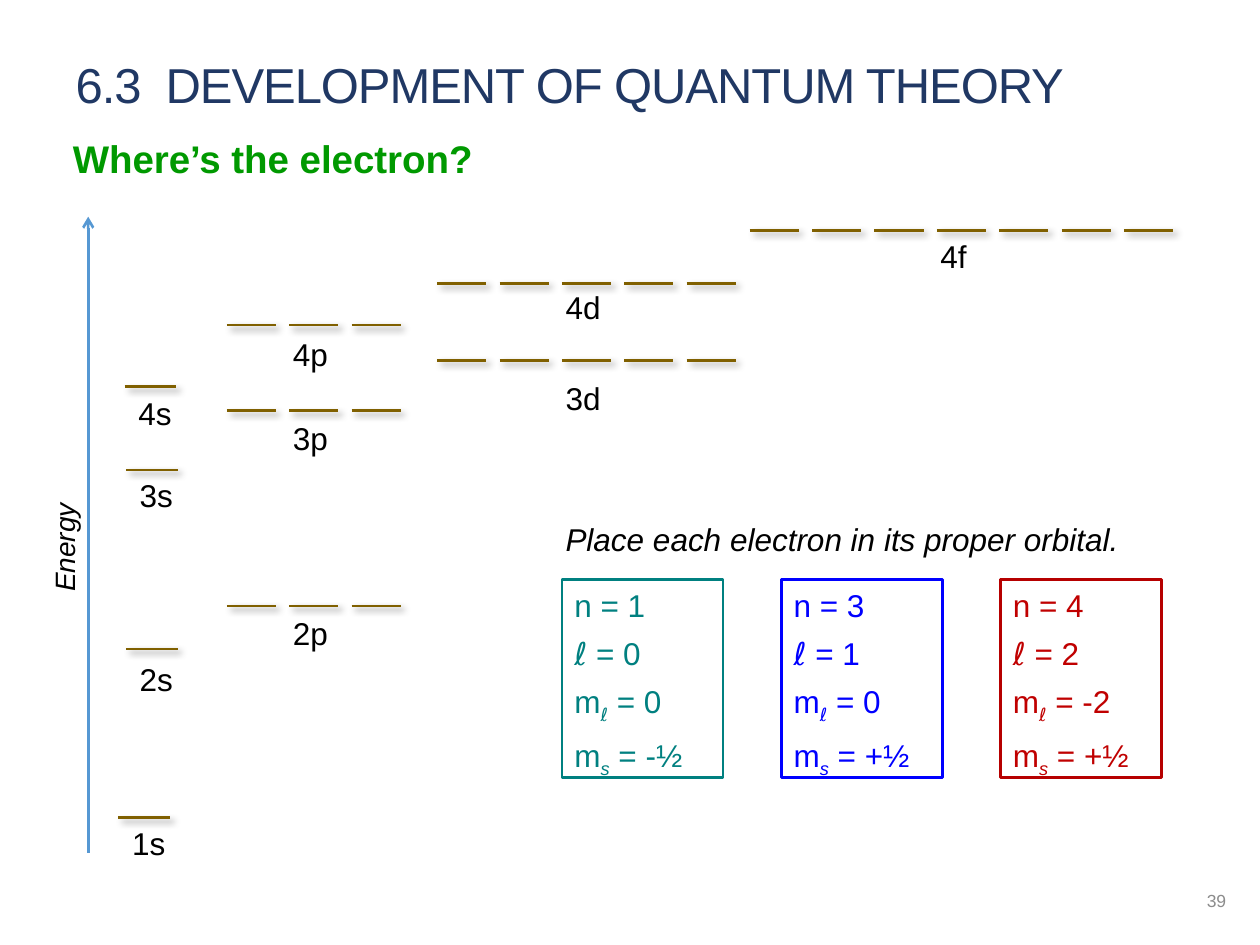
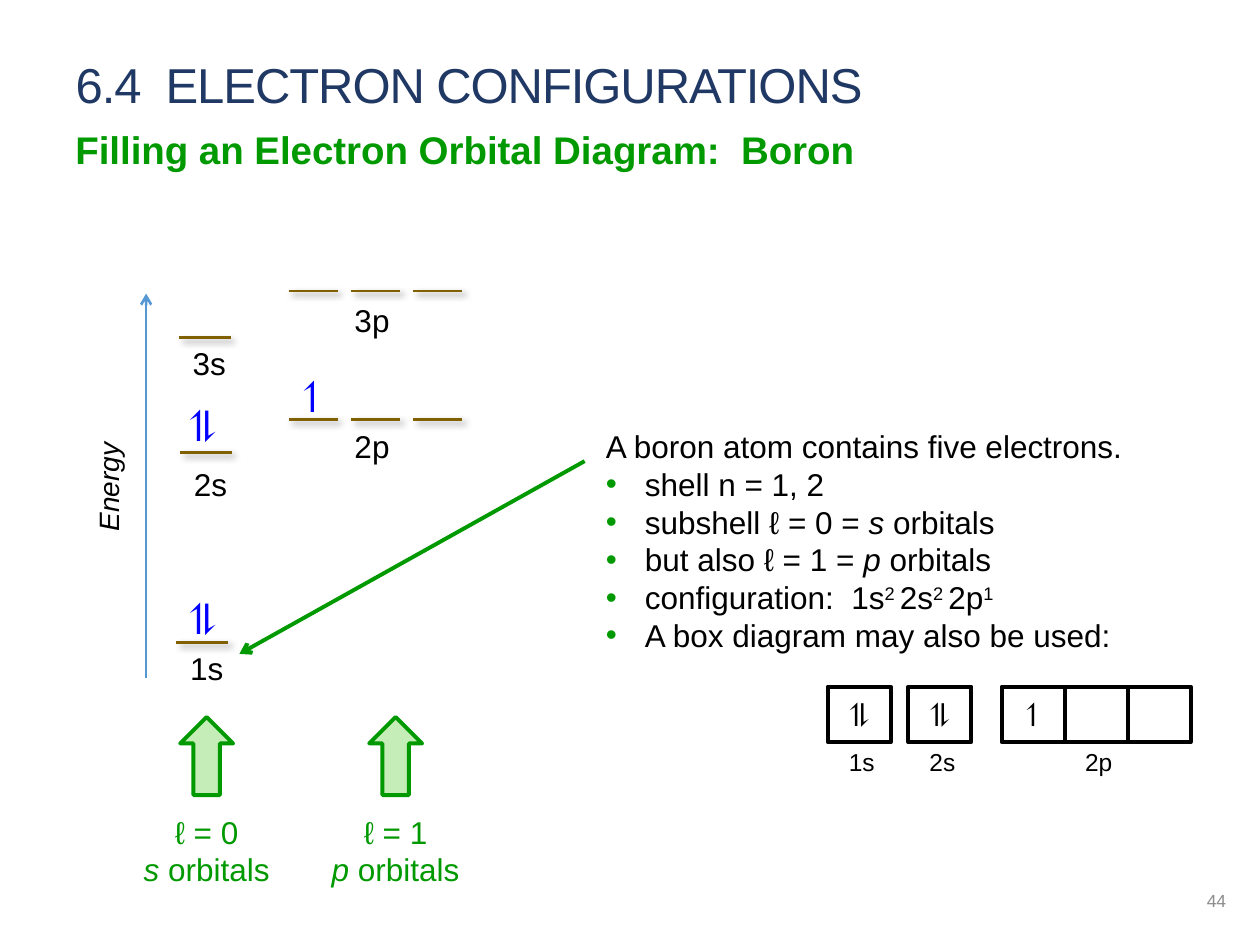
from dataclasses import dataclass

from lxml.etree import SubElement
from pptx import Presentation
from pptx.dml.color import RGBColor
from pptx.enum.shapes import MSO_CONNECTOR, MSO_SHAPE
from pptx.enum.text import MSO_ANCHOR, MSO_AUTO_SIZE, PP_ALIGN
from pptx.oxml.ns import qn
from pptx.util import Inches, Pt


@dataclass(frozen=True)
class Theme:
    font: str = "Arial"
    symbol_font: str = "DejaVu Sans"
    spin_font: str = "Cambria"
    title: str = "203864"
    green: str = "009900"
    pale_green: str = "C4EDB7"
    text: str = "000000"
    number: str = "8C8C8C"
    orbital: str = "806000"
    axis: str = "5698D3"
    blue: str = "0000FF"
    teal: str = "008080"
    red: str = "C00000"
    red_line: str = "B60000"
    title_size: int = 28
    subtitle_size: int = 22
    spin_size: int = 24
    body_size: int = 18
    axis_size: int = 16
    small_size: int = 14
    number_size: int = 10


THEME = Theme()
ITALIC = {"italic": True}


def add_run(p, text, *, size=THEME.body_size, color=THEME.text, font=THEME.font,
            bold=False, italic=False, baseline=0, spacing=0):
    """Add one run; baseline is in percent and spacing in points."""
    r = p.add_run()
    r.text = text
    r.font.name, r.font.size = font, Pt(size)
    r.font.bold, r.font.italic = bold, italic
    r.font.color.rgb = RGBColor.from_string(color)
    if baseline:
        r.font._element.set("baseline", str(baseline * 1000))
    if spacing:
        r.font._element.set("spc", str(round(spacing * 100)))


def add_bullet(p):
    pPr = p._p.get_or_add_pPr()
    pPr.set("marL", str(Inches(0.31)))
    pPr.set("indent", str(-Inches(0.31)))
    SubElement(SubElement(pPr, qn("a:buClr")), qn("a:srgbClr"), val=THEME.green)
    SubElement(pPr, qn("a:buFont"), typeface=THEME.font)
    SubElement(pPr, qn("a:buChar"), char="•")


def write(tf, paragraphs, *, align=PP_ALIGN.LEFT, anchor=MSO_ANCHOR.TOP,
          after=0, bullets_from=None, **fmt):
    """Fill a frame; a paragraph is a string or a list of strings and (string, format)."""
    tf.word_wrap = True
    tf.auto_size = MSO_AUTO_SIZE.NONE
    tf.vertical_anchor = anchor
    if isinstance(paragraphs, str):
        paragraphs = [paragraphs]
    for i, runs in enumerate(paragraphs):
        p = tf.add_paragraph() if i else tf.paragraphs[0]
        p.alignment, p.space_after = align, Pt(after)
        if bullets_from is not None and i >= bullets_from:
            add_bullet(p)
        for run in [runs] if isinstance(runs, str) else runs:
            text, extra = (run, {}) if isinstance(run, str) else run
            add_run(p, text, **{**fmt, **extra})


class Deck:
    BAR_PITCH = 0.495

    def __init__(self, theme):
        self.theme = theme
        self.prs = Presentation()
        self.prs.slide_width, self.prs.slide_height = Inches(10), Inches(7.5)

    def new_slide(self, title, subtitle, subtitle_at, number):
        t = self.theme
        self.s = self.prs.slides.add_slide(self.prs.slide_layouts[5])
        sp = self.s.shapes.title
        sp.left, sp.top = Inches(0.5), Inches(0.38)
        sp.width, sp.height = Inches(9.33), Inches(0.57)
        write(sp.text_frame, title, anchor=MSO_ANCHOR.BOTTOM, size=t.title_size,
              color=t.title, spacing=-0.6)
        self.text(*subtitle_at, 9.33, 0.72, subtitle, after=6,
                  size=t.subtitle_size, color=t.green, bold=True)
        self.text(7.58, 6.95, 2.25, 0.4, str(number), align=PP_ALIGN.RIGHT,
                  anchor=MSO_ANCHOR.MIDDLE, size=t.number_size, color=t.number)

    def text(self, x, y, w, h, paragraphs, **fmt):
        sp = self.s.shapes.add_textbox(Inches(x), Inches(y), Inches(w), Inches(h))
        write(sp.text_frame, paragraphs, **fmt)
        return sp

    def centred(self, cx, y, w, h, paragraphs, **fmt):
        return self.text(cx - w / 2, y, w, h, paragraphs, align=PP_ALIGN.CENTER, **fmt)

    def shape(self, kind, x, y, w, h, line, width, fill=None, paragraphs=None, **fmt):
        sp = self.s.shapes.add_shape(kind, Inches(x), Inches(y), Inches(w), Inches(h))
        sp.shadow.inherit = False
        if fill:
            sp.fill.solid()
            sp.fill.fore_color.rgb = RGBColor.from_string(fill)
        else:
            sp.fill.background()
        sp.line.color.rgb = RGBColor.from_string(line)
        sp.line.width = Pt(width)
        if paragraphs:
            write(sp.text_frame, paragraphs, **fmt)

    def line(self, x1, y1, x2, y2, color, width=1.5, arrow=False, shadow=False):
        c = self.s.shapes.add_connector(MSO_CONNECTOR.STRAIGHT, Inches(x1), Inches(y1),
                                        Inches(x2), Inches(y2))
        c.line.color.rgb = RGBColor.from_string(color)
        c.line.width = Pt(width)
        if arrow:
            SubElement(c.line._get_or_add_ln(), qn("a:tailEnd"), type="arrow")
        effects = SubElement(c._element.spPr, qn("a:effectLst"))
        if shadow:
            outer = SubElement(effects, qn("a:outerShdw"), blurRad=str(Pt(4)),
                               dist=str(Pt(3)), dir="2700000", rotWithShape="0")
            black = SubElement(outer, qn("a:srgbClr"), val="000000")
            SubElement(black, qn("a:alpha"), val="40000")

    def subshell(self, name, x, y, label_y):
        """Draw one bar per orbital, with the name of the subshell under the middle."""
        count = {"s": 1, "p": 3, "d": 5, "f": 7}[name[-1]]
        width = 0.41 if count == 1 else 0.39
        for i in range(count):
            left = x + i * self.BAR_PITCH
            self.line(left, y, left + width, y, self.theme.orbital, shadow=True)
        offset = max(0.01, self.BAR_PITCH * (count - 1) / 2 - 0.07)
        self.text(x + offset, label_y, 0.52, 0.52, name)

    def energy_axis(self, x, bottom, top, label_cx, label_cy):
        self.line(x, bottom, x, top, self.theme.axis, arrow=True)
        sp = self.centred(label_cx, label_cy - 0.18, 1, 0.37, "Energy",
                          size=self.theme.axis_size, italic=True)
        sp.rotation = 270

    def quantum_numbers(self, x, n, l, ml, ms, color, line):
        symbol = {"font": self.theme.symbol_font}
        self.shape(MSO_SHAPE.RECTANGLE, x, 4.6, 1.28, 1.57, line, 1.5, paragraphs=[
            f"n = {n}",
            [("ℓ", symbol), f" = {l}"],
            ["m", ("ℓ", {**symbol, "baseline": -25}), f" = {ml}"],
            ["m", ("s", {"italic": True, "baseline": -25}), f" = {ms}"],
        ], after=6, color=color)

    def spin(self, cx, y, arrows):
        self.centred(cx, y, 0.6, 0.5, arrows, size=self.theme.spin_size,
                     color=self.theme.blue, font=self.theme.spin_font)

    def box_diagram(self, x, name, orbitals):
        w = 0.5
        for i, arrows in enumerate(orbitals):
            self.shape(MSO_SHAPE.RECTANGLE, x + i * w, 5.45, w, 0.44, self.theme.text, 2.25,
                       paragraphs=arrows, align=PP_ALIGN.CENTER, anchor=MSO_ANCHOR.MIDDLE,
                       font=self.theme.spin_font)
        self.centred(x + w * len(orbitals) / 2 + 0.02, 5.88, w, 0.34, name,
                     size=self.theme.small_size)

    def orbital_pointer(self, cx, l, letter):
        t = self.theme
        self.shape(MSO_SHAPE.UP_ARROW, cx - 0.21, 5.69, 0.42, 0.62, t.green, 2.25,
                   fill=t.pale_green)
        self.centred(cx, 6.4, 1.4, 0.71, [f"ℓ = {l}", [(letter, ITALIC), " orbitals"]],
                     color=t.green)


def quantum_theory(deck):
    t = deck.theme
    deck.new_slide("6.3  DEVELOPMENT OF QUANTUM THEORY", "Where’s the electron?",
                   (0.48, 1.02), 39)
    deck.energy_axis(0.7, 6.77, 1.72, 0.51, 4.34)
    for name, x, y, label_y in [
        ("1s", 0.94, 6.49, 6.49), ("2s", 1, 5.15, 5.19),
        ("3s", 1, 3.73, 3.73), ("4s", 0.99, 3.07, 3.08),
        ("2p", 1.8, 4.81, 4.82), ("3p", 1.8, 3.26, 3.28), ("4p", 1.8, 2.58, 2.61),
        ("3d", 3.47, 2.86, 2.96), ("4d", 3.47, 2.25, 2.24),
        ("4f", 5.95, 1.83, 1.83),
    ]:
        deck.subshell(name, x, y, label_y)
    deck.text(4.39, 4.08, 4.8, 0.4, "Place each electron in its proper orbital.", italic=True)
    for i, electron in enumerate([
        (1, 0, "0", "-½", t.teal, t.teal),
        (3, 1, "0", "+½", t.blue, t.blue),
        (4, 2, "-2", "+½", t.red, t.red_line),
    ]):
        deck.quantum_numbers(4.46 + 1.74 * i, *electron)


def electron_configurations(deck):
    t = deck.theme
    raised = {"baseline": 30}
    deck.new_slide("6.4  ELECTRON CONFIGURATIONS",
                   "Filling an Electron Orbital Diagram:  Boron", (0.5, 0.95), 44)
    deck.energy_axis(1.16, 5.38, 2.33, 0.86, 3.86)
    for name, x, y, label_y in [
        ("1s", 1.4, 5.1, 5.1), ("2s", 1.43, 3.59, 3.64), ("3s", 1.42, 2.68, 2.68),
        ("2p", 2.29, 3.33, 3.34), ("3p", 2.29, 2.31, 2.34),
    ]:
        deck.subshell(name, x, y, label_y)
    for cx, y, arrows in [(1.61, 4.65, "⥮"), (1.61, 3.12, "⥮"), (2.48, 2.89, "↿")]:
        deck.spin(cx, y, arrows)
    deck.line(4.64, 3.66, 1.9, 5.19, t.green, 2.25, arrow=True)
    deck.text(4.71, 3.34, 5, 1.92, [
        "A boron atom contains five electrons.",
        "shell n = 1, 2",
        ["subshell ℓ = 0 = ", ("s", ITALIC), " orbitals"],
        ["but also ℓ = 1 = ", ("p", ITALIC), " orbitals"],
        ["configuration:  1s", ("2 ", raised), "2s", ("2 ", raised), "2p", ("1", raised)],
        "A box diagram may also be used:",
    ], bullets_from=1)
    deck.box_diagram(6.57, "1s", ["⥮"])
    deck.box_diagram(7.21, "2s", ["⥮"])
    deck.box_diagram(7.95, "2p", ["↿", None, None])
    deck.orbital_pointer(1.64, 0, "s")
    deck.orbital_pointer(3.14, 1, "p")


def main():
    deck = Deck(THEME)
    quantum_theory(deck)
    electron_configurations(deck)
    deck.prs.save("out.pptx")


if __name__ == "__main__":
    main()
